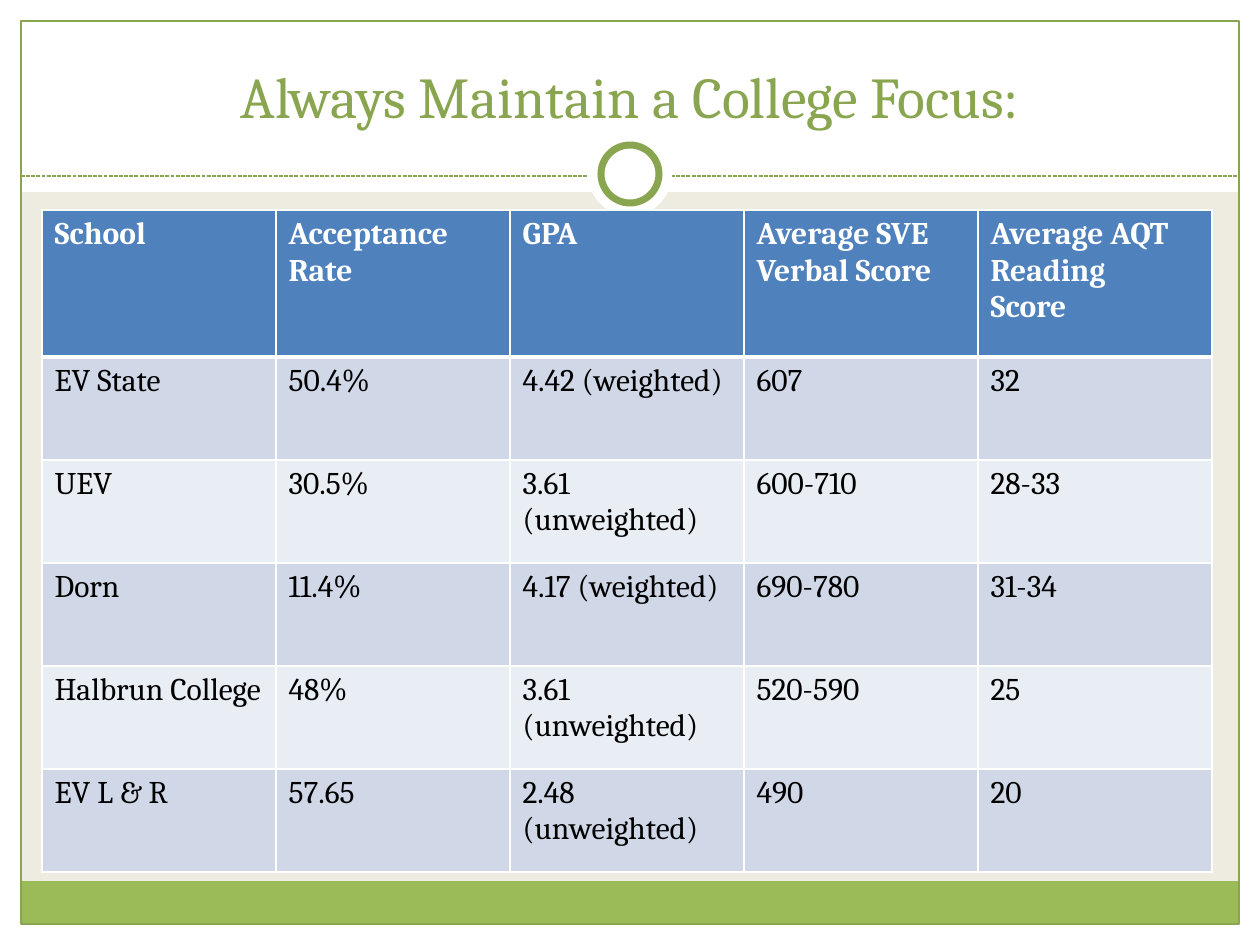
from dataclasses import dataclass

from lxml import etree
from pptx import Presentation
from pptx.dml.color import RGBColor
from pptx.enum.dml import MSO_LINE
from pptx.enum.shapes import MSO_CONNECTOR, MSO_SHAPE
from pptx.enum.text import MSO_ANCHOR, MSO_AUTO_SIZE, PP_ALIGN
from pptx.oxml.ns import qn
from pptx.util import Pt

RECT = MSO_SHAPE.RECTANGLE
OVAL = MSO_SHAPE.OVAL
LINE = MSO_CONNECTOR.STRAIGHT
DASH = MSO_LINE.SQUARE_DOT
LOW = MSO_ANCHOR.BOTTOM
MID = PP_ALIGN.CENTER
LEFT = PP_ALIGN.LEFT
FIXED = MSO_AUTO_SIZE.NONE
SCALE = 914400 / 126
WIDE, HIGH = 1260, 945
EDGE = 21


@dataclass(frozen=True)
class Theme:
    font: str = "Cambria"
    sand: str = "EEECE1"
    white: str = "FFFFFF"
    black: str = "000000"
    leaf: str = "9BBB59"
    moss: str = "89A54F"
    blue: str = "4F81BD"
    bands: tuple = ("D0D8E8", "E9EDF4")
    head: int = 33
    body: int = 18
    thin: float = 0.75
    ring: int = 4
    rule: int = 1
    thick: int = 3


def px(num):
    return round(num * SCALE)


def tint(code):
    return RGBColor.from_string(code)


class Deck:
    def __init__(self, theme):
        self.theme = theme
        self.file = Presentation()
        self.file.slide_width = px(WIDE)
        self.file.slide_height = px(HIGH)
        self.slide = self.file.slides.add_slide(self.file.slide_layouts[5])
        fill = self.slide.background.fill
        fill.solid()
        fill.fore_color.rgb = tint(theme.sand)

    def shape(self, kind, area, fill=None, line=None, width=0):
        item = self.slide.shapes.add_shape(kind, *map(px, area))
        item.shadow.inherit = False
        if fill:
            item.fill.solid()
            item.fill.fore_color.rgb = tint(fill)
        else:
            item.fill.background()
        if line:
            item.line.color.rgb = tint(line)
            item.line.width = Pt(width)
        else:
            item.line.fill.background()

    def dash(self, left, right, top):
        item = self.slide.shapes.add_connector(LINE, px(left), px(top), px(right), px(top))
        item.line.color.rgb = tint(self.theme.moss)
        item.line.width = Pt(self.theme.thin)
        item.line.dash_style = DASH
        etree.SubElement(item._element.spPr, qn("a:effectLst"))

    def run(self, para, text, size, color, bold=False):
        run = para.add_run()
        run.text = text
        run.font.name = self.theme.font
        run.font.size = Pt(size)
        run.font.bold = bold
        run.font.color.rgb = tint(color)

    def title(self, text, area):
        item = self.slide.shapes.title
        item.left, item.top, item.width, item.height = map(px, area)
        frame = item.text_frame
        frame.word_wrap = True
        frame.auto_size = FIXED
        frame.vertical_anchor = LOW
        para = frame.paragraphs[0]
        para.alignment = MID
        self.run(para, text, self.theme.head, self.theme.moss)
        self.slide.shapes._spTree.append(item._element)

    def border(self, cell, top, base):
        rule = self.theme.rule
        sides = (("L", rule), ("R", rule), ("T", top), ("B", base))
        props = cell._tc.get_or_add_tcPr()
        for spot, (side, width) in enumerate(sides):
            line = etree.Element(qn("a:ln" + side), w=str(Pt(width)))
            fill = etree.SubElement(line, qn("a:solidFill"))
            etree.SubElement(fill, qn("a:srgbClr"), val=self.theme.white)
            props.insert(spot, line)

    def cell(self, cell, text, fill, color, bold):
        cell.fill.solid()
        cell.fill.fore_color.rgb = tint(fill)
        frame = cell.text_frame
        for spot, part in enumerate(text.split("\n")):
            para = frame.add_paragraph() if spot else frame.paragraphs[0]
            para.alignment = LEFT
            self.run(para, part, self.theme.body, color, bold)

    def table(self, rows, left, top, wide, highs):
        look = self.theme
        cols = len(rows[0])
        area = map(px, (left, top, wide * cols, sum(highs)))
        grid = self.slide.shapes.add_table(len(rows), cols, *area).table
        for col in grid.columns:
            col.width = px(wide)
        for r, row in enumerate(rows):
            grid.rows[r].height = px(highs[r])
            head = r == 0
            fill = look.blue if head else look.bands[(r - 1) % 2]
            color = look.white if head else look.black
            for c, text in enumerate(row):
                cell = grid.cell(r, c)
                self.cell(cell, text, fill, color, head)
                self.border(cell, look.thick if r == 1 else look.rule,
                            look.thick if head else look.rule)


ROWS = [
    ("School", "Acceptance Rate", "GPA", "Average SVE Verbal Score", "Average AQT Reading\nScore"),
    ("EV State", "50.4%", "4.42 (weighted)", "607", "32"),
    ("UEV", "30.5%", "3.61 (unweighted)", "600-710", "28-33"),
    ("Dorn", "11.4%", "4.17 (weighted)", "690-780", "31-34"),
    ("Halbrun College", "48%", "3.61 (unweighted)", "520-590", "25"),
    ("EV L & R", "57.65", "2.48 (unweighted)", "490", "20"),
]


def main():
    look = Theme()
    deck = Deck(look)
    inner = WIDE - 2 * EDGE
    for area in (
        (0, HIGH - EDGE, WIDE, EDGE),
        (0, 0, WIDE, 192),
        (0, 0, EDGE, HIGH),
        (WIDE - EDGE, 0, EDGE, HIGH),
    ):
        deck.shape(RECT, area, look.white)
    deck.shape(RECT, (EDGE, 881, inner, 43), look.leaf)
    deck.shape(RECT, (EDGE, EDGE, inner, HIGH - 2 * EDGE), None, look.moss, look.thin)
    deck.dash(EDGE, WIDE - EDGE, 176)
    deck.shape(OVAL, (588, 132, 84, 84), look.white)
    deck.shape(OVAL, (601, 145, 58, 58), look.white, look.moss, look.ring)
    deck.title("Always Maintain a College Focus:", (42, 32, 1176, 104))
    deck.table(ROWS, 42, 210, 234, [147] + [103] * 5)
    deck.file.save("out.pptx")


if __name__ == "__main__":
    main()
